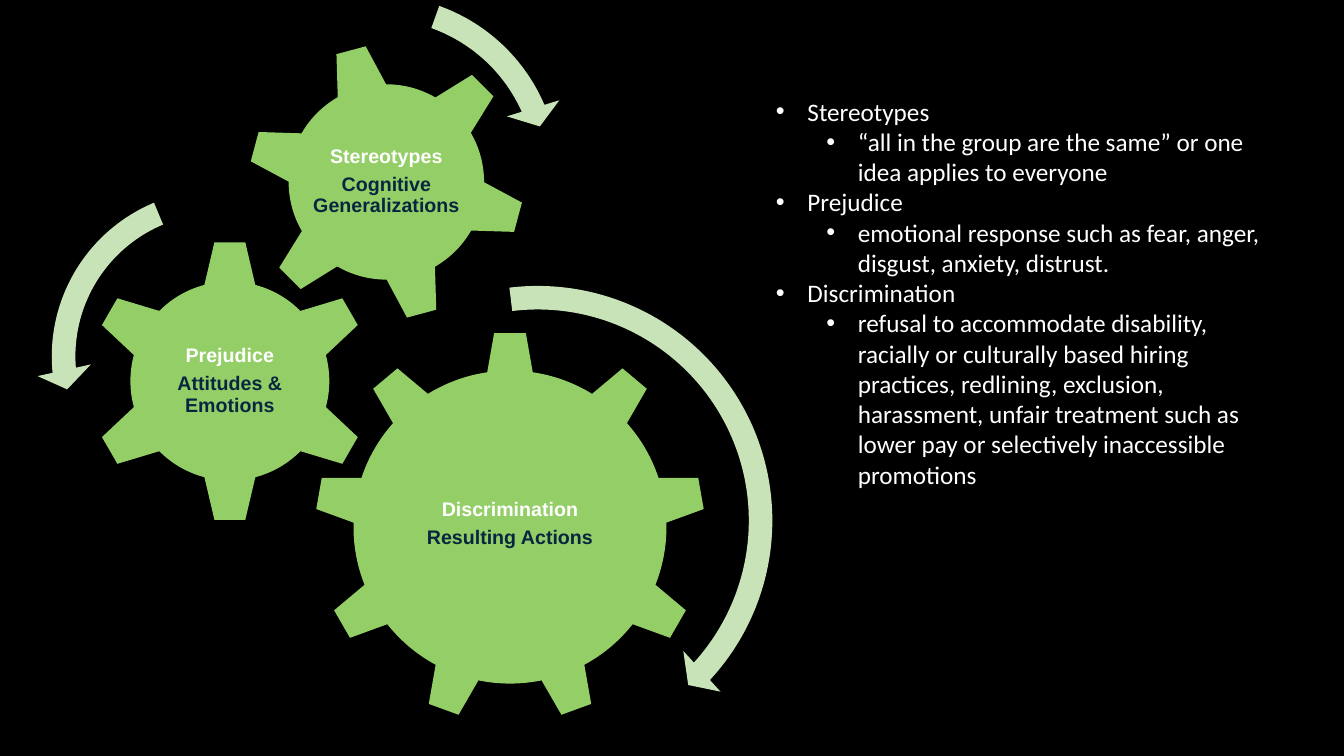
"""Build a slide of three interlocking gears linking stereotypes, prejudice and discrimination."""
from lxml import etree
from pptx import Presentation
from pptx.dml.color import RGBColor
from pptx.enum.shapes import MSO_SHAPE
from pptx.enum.text import MSO_ANCHOR, PP_ALIGN
from pptx.oxml.ns import qn
from pptx.util import Pt

GEAR_6, GEAR_9 = MSO_SHAPE.GEAR_6, MSO_SHAPE.GEAR_9
CLOCKWISE, COUNTERCLOCKWISE = MSO_SHAPE.CIRCULAR_ARROW, MSO_SHAPE.LEFT_CIRCULAR_ARROW
MIDDLE, CENTER = MSO_ANCHOR.MIDDLE, PP_ALIGN.CENTER

BLACK = RGBColor(0x00, 0x00, 0x00)
WHITE = RGBColor(0xFF, 0xFF, 0xFF)
NAVY = RGBColor(0x08, 0x26, 0x3F)
GREEN = RGBColor(0x94, 0xCE, 0x67)
PALE_GREEN = RGBColor(0xC8, 0xE3, 0xB8)

GEARS = [
    {"kind": GEAR_9, "center": (364.3, 376.5), "size": 279.4, "rotation": 0,
     "label": ("Discrimination", "Resulting Actions"), "label_width": 167, "label_rise": 2},
    {"kind": GEAR_6, "center": (164.2, 272.2), "size": 203, "rotation": 0,
     "label": ("Prejudice", "Attitudes & Emotions"), "label_width": 100.8, "label_rise": 0},
    {"kind": GEAR_6, "center": (276, 130), "size": 199.4, "rotation": 345,
     "label": ("Stereotypes", "Cognitive Generalizations"), "label_width": 111.6, "label_rise": 0},
]
ARROWS = [
    {"kind": CLOCKWISE, "center": (384.1, 371.9), "size": 357.8, "rotation": 0,
     "thickness": 0.047, "angles": (4.98, 42.54, 263.08), "head": 0.055},
    {"kind": COUNTERCLOCKWISE, "center": (155.9, 254.5), "size": 259.9, "rotation": 0,
     "thickness": 0.065, "angles": (7.17, 174.82, 247.3), "head": 0.075},
    {"kind": CLOCKWISE, "center": (270.4, 125.6), "size": 280.1, "rotation": 114.5,
     "thickness": 0.06, "angles": (6.57, 221.9, 175.14), "head": 0.07},
]
DEFINITIONS = [
    ("Stereotypes", "“all in the group are the same” or one idea applies to everyone"),
    ("Prejudice", "emotional response such as fear, anger, disgust, anxiety, distrust."),
    ("Discrimination", "refusal to accommodate disability, racially or culturally based hiring "
     "practices, redlining, exclusion, harassment, unfair treatment such as lower pay or "
     "selectively inaccessible promotions"),
]
DEFINITIONS_BOX = (547.2, 65, 371.5, 290)
LABEL_HEIGHT = 100
LABEL_MARGIN = 1.4
BULLET_INDENT, LEVEL_INDENT = 22.5, 36
DEGREE = 0.6

LABEL_FRAME = {"word_wrap": True, "vertical_anchor": MIDDLE,
               **{f"margin_{side}": Pt(LABEL_MARGIN) for side in ("left", "top", "right", "bottom")}}
LABEL_PARAGRAPH = {"alignment": CENTER, "line_spacing": 0.9, "space_after": Pt(5)}
LABEL_FONT = {"name": "Arial", "size": Pt(14), "bold": True}
DEFINITION_FONT = {"name": "Calibri", "size": Pt(18)}


def apply(target, values):
    for name, value in values.items():
        setattr(target, name, value)


def centered(center, width, height):
    x, y = center
    return [Pt(value) for value in (x - width / 2, y - height / 2, width, height)]


def add_part(slide, part, color):
    shape = slide.shapes.add_shape(part["kind"], *centered(part["center"], part["size"], part["size"]))
    shape.rotation = part["rotation"]
    shape.shadow.inherit = False
    shape.fill.solid()
    shape.fill.fore_color.rgb = color
    shape.line.fill.background()
    return shape


def add_label(slide, gear):
    x, y = gear["center"]
    center = (x, y - gear["label_rise"])
    frame = slide.shapes.add_textbox(*centered(center, gear["label_width"], LABEL_HEIGHT)).text_frame
    apply(frame, LABEL_FRAME)
    frame.text = "\n".join(gear["label"])
    for paragraph, color in zip(frame.paragraphs, (WHITE, NAVY)):
        apply(paragraph, LABEL_PARAGRAPH)
        apply(paragraph.font, LABEL_FONT)
        paragraph.font.color.rgb = color


def add_arrow(slide, arrow):
    shape = add_part(slide, arrow, PALE_GREEN)
    angles = [angle * DEGREE for angle in arrow["angles"]]
    for index, value in enumerate([arrow["thickness"], *angles, arrow["head"]]):
        shape.adjustments[index] = value


def add_definitions(slide):
    frame = slide.shapes.add_textbox(*[Pt(value) for value in DEFINITIONS_BOX]).text_frame
    frame.word_wrap = True
    frame.text = "\n".join(line for definition in DEFINITIONS for line in definition)
    for index, paragraph in enumerate(frame.paragraphs):
        paragraph.level = index % 2
        properties = paragraph._p.get_or_add_pPr()
        properties.set("marL", str(Pt(BULLET_INDENT + LEVEL_INDENT * paragraph.level)))
        properties.set("indent", str(-Pt(BULLET_INDENT)))
        etree.SubElement(properties, qn("a:buFont"), typeface="Arial")
        etree.SubElement(properties, qn("a:buChar"), char="•")
        apply(paragraph.font, DEFINITION_FONT)
        paragraph.font.color.rgb = WHITE


def main():
    presentation = Presentation()
    presentation.slide_width, presentation.slide_height = Pt(960), Pt(540)
    slide = presentation.slides.add_slide(presentation.slide_layouts.get_by_name("Blank"))
    slide.background.fill.solid()
    slide.background.fill.fore_color.rgb = BLACK
    for gear in GEARS:
        add_part(slide, gear, GREEN)
        add_label(slide, gear)
    for arrow in ARROWS:
        add_arrow(slide, arrow)
    add_definitions(slide)
    presentation.save("out.pptx")


if __name__ == "__main__":
    main()
